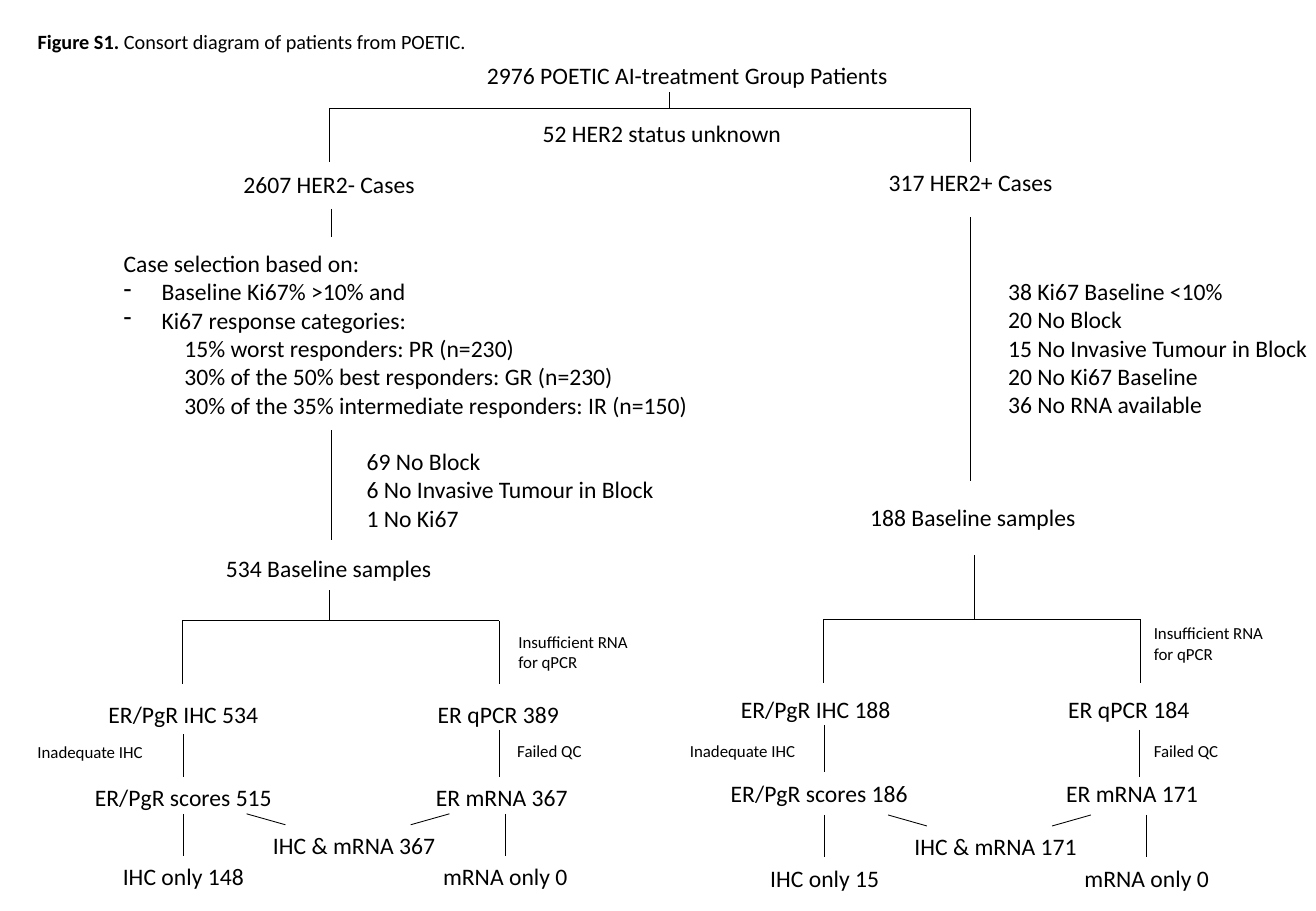
from lxml import etree
from pptx import Presentation
from pptx.dml.color import RGBColor
from pptx.enum.shapes import MSO_CONNECTOR
from pptx.enum.text import MSO_ANCHOR, MSO_AUTO_SIZE, PP_ALIGN
from pptx.oxml.ns import qn
from pptx.util import Pt

STRAIGHT = MSO_CONNECTOR.STRAIGHT
TOP = MSO_ANCHOR.TOP
GROW = MSO_AUTO_SIZE.SHAPE_TO_FIT_TEXT
LEFT, CENTER = PP_ALIGN.LEFT, PP_ALIGN.CENTER

COLORS = {"ink": "000000"}
FONT = "Calibri"
BODY, SMALL, CAPTION = 14, 10, 12
LINE_HEIGHT, INSETS = 1.22, 7.2
TOLERANCE = 0.5

TITLE = ("Figure S1. ", "Consort diagram of patients from POETIC.")

# fields: text, centre x, top, width
LABELS = [
    ("2976 POETIC AI-treatment Group Patients", 407.5, 32.4, 255),
    ("2607 HER2- Cases", 195.1, 97.2, 117),
    ("317 HER2+ Cases", 575.3, 95.8, 113),
    ("534 Baseline samples", 194.8, 324.7, 137),
    ("ER/PgR IHC 534", 108.7, 411.1, 104),
    ("ER qPCR 389", 295.4, 411.1, 87),
    ("ER/PgR scores 515", 108.7, 460.8, 120),
    ("ER mRNA 367", 297.4, 460.8, 94),
    ("IHC & mRNA 367", 209.9, 488.9, 112),
    ("IHC only 148", 108.7, 507.6, 87),
    ("mRNA only 0", 299.5, 507.6, 89),
    ("188 Baseline samples", 576.7, 294.5, 137),
    ("ER/PgR IHC 188", 483.5, 408.2, 104),
    ("ER qPCR 184", 669.1, 408.2, 87),
    ("ER/PgR scores 186", 485.6, 457.9, 120),
    ("ER mRNA 171", 671, 457.9, 94),
    ("IHC & mRNA 171", 590.1, 489.6, 112),
    ("IHC only 15", 488.9, 508.3, 80),
    ("mRNA only 0", 679.7, 508.3, 89),
]

# fields: lines, left, top, width, size, wrap
NOTES = [
    (["52 HER2 status unknown"], 314.6, 67, 160, BODY, True),
    (["69 No Block", "6 No Invasive Tumour in Block", "1 No Ki67"],
     210.2, 261.4, 186.5, BODY, False),
    (["38 Ki67 Baseline <10%", "20 No Block", "15 No Invasive Tumour in Block",
      "20 No Ki67 Baseline", "36 No RNA available"],
     590.4, 160.6, 193.7, BODY, False),
    (["Insufficient RNA for qPCR"], 300.2, 370.8, 86.4, SMALL, True),
    (["Insufficient RNA for qPCR"], 676.8, 365.8, 83.5, SMALL, True),
    (["Inadequate IHC"], 15.1, 436.3, 77.8, SMALL, False),
    (["Inadequate IHC"], 401.8, 435.6, 77.8, SMALL, False),
    (["Failed QC"], 299.5, 435.6, 53.3, SMALL, False),
    (["Failed QC"], 676.8, 435.6, 53.3, SMALL, False),
]

SELECTION_BOX = (66.2, 144, 365)
# fields: text, left margin, bullet
SELECTION = [
    ("Case selection based on:", 0, None),
    ("Baseline Ki67% >10% and", 22.5, "-"),
    ("Ki67 response categories:", 22.5, "-"),
    ("15% worst responders: PR (n=230)", 36, None),
    ("30% of the 50% best responders: GR (n=230)", 36, None),
    ("30% of the 35% intermediate responders: IR (n=150)", 36, None),
]

TRUNK = [
    (396.7, 54.7, 396.7, 64.1), (195.1, 64.1, 575.3, 64.1),
    (195.1, 64.1, 195.1, 95.8), (575.3, 64.1, 575.3, 95.8),
    (196.6, 123.8, 196.6, 140.4), (196.6, 254.9, 196.6, 320.4),
    (195.1, 349.9, 195.1, 367.9), (575.3, 128.9, 575.3, 285.1),
    (577.4, 329, 577.4, 367.2), (108.7, 435.4, 108.7, 460.8),
    (295.9, 432.7, 295.9, 460.8), (488.9, 429.8, 488.9, 457.9),
    (675.4, 432.7, 675.4, 460.8),
]
ASSAY_SPLIT = [
    (108, 367.9, 295.9, 367.9), (108, 367.9, 108, 405.4),
    (295.9, 367.9, 295.9, 405.4),
]
OUTCOME_SPLIT = [
    (108.7, 482.4, 108.7, 507.6), (299.5, 482.4, 299.5, 507.6),
    (146.2, 482.4, 169.2, 488.9), (266.4, 482.4, 243.4, 488.9),
]
ARM_STEP, ARM_RISE = 380.2, 0.7


def style(tf, size, wrap, align):
    tf.word_wrap = wrap
    tf.auto_size = GROW
    tf.vertical_anchor = TOP
    for p in tf.paragraphs:
        p.alignment = align
        for r in p.runs:
            r.font.name = FONT
            r.font.size = Pt(size)
            r.font.color.rgb = RGBColor.from_string(COLORS["ink"])


def text_height(count, size):
    return count * size * LINE_HEIGHT + INSETS


def add_text(s, lines, left, top, width, size=BODY, wrap=False, align=LEFT):
    rows = 2 if lines[0].startswith("Insufficient") else len(lines)
    sp = s.shapes.add_textbox(Pt(left), Pt(top), Pt(width), Pt(text_height(rows, size)))
    tf = sp.text_frame
    tf.text = "\n".join(lines)
    style(tf, size, wrap, align)
    return sp


def add_selection(s):
    sp = add_text(s, [text for text, _, _ in SELECTION], *SELECTION_BOX, wrap=True)
    for p, (_, margin, bullet) in zip(sp.text_frame.paragraphs, SELECTION):
        pPr = p._p.get_or_add_pPr()
        pPr.set("marL", str(Pt(margin)))
        pPr.set("indent", str(-Pt(margin) if bullet else 0))
        if bullet:
            etree.SubElement(pPr, qn("a:buChar")).set("char", bullet)


def add_line(s, ends, sites):
    x1, y1, x2, y2 = ends
    line = s.shapes.add_connector(STRAIGHT, Pt(x1), Pt(y1), Pt(x2), Pt(y2))
    line.line.color.rgb = RGBColor.from_string(COLORS["ink"])
    line.line.width = Pt(0.5)
    etree.SubElement(line._element.spPr, qn("a:effectLst"))
    for x, y, join in ((x1, y1, line.begin_connect), (x2, y2, line.end_connect)):
        for sp, site, site_x, site_y in sites:
            if max(abs(x - site_x), abs(y - site_y)) < TOLERANCE:
                join(sp, site)


def shifted(lines, dx, dy):
    return [(x1 + dx, y1 + dy, x2 + dx, y2 + dy) for x1, y1, x2, y2 in lines]


def main():
    """Build the patient flow diagram slide."""
    prs = Presentation()
    prs.slide_width, prs.slide_height = Pt(780), Pt(540)
    s = prs.slides.add_slide(prs.slide_layouts[5])

    title = s.shapes.title
    title.left, title.top, title.width, title.height = Pt(15.1), Pt(13.7), Pt(271.4), Pt(21.8)
    p = title.text_frame.paragraphs[0]
    for i, text in enumerate(TITLE):
        r = p.add_run()
        r.text = text
        r.font.bold = i == 0
    style(title.text_frame, CAPTION, False, LEFT)

    sites = []
    height = text_height(1, BODY)
    for text, cx, top, width in LABELS:
        sp = add_text(s, [text], cx - width / 2, top, width, align=CENTER)
        sites += [(sp, 0, cx, top), (sp, 2, cx, top + height)]
    for note in NOTES:
        add_text(s, *note)
    add_selection(s)

    lines = TRUNK + ASSAY_SPLIT + OUTCOME_SPLIT
    lines += shifted(ASSAY_SPLIT, ARM_STEP, -ARM_RISE)
    lines += shifted(OUTCOME_SPLIT, ARM_STEP, ARM_RISE)
    for ends in lines:
        add_line(s, ends, sites)

    prs.save("out.pptx")


if __name__ == "__main__":
    main()
